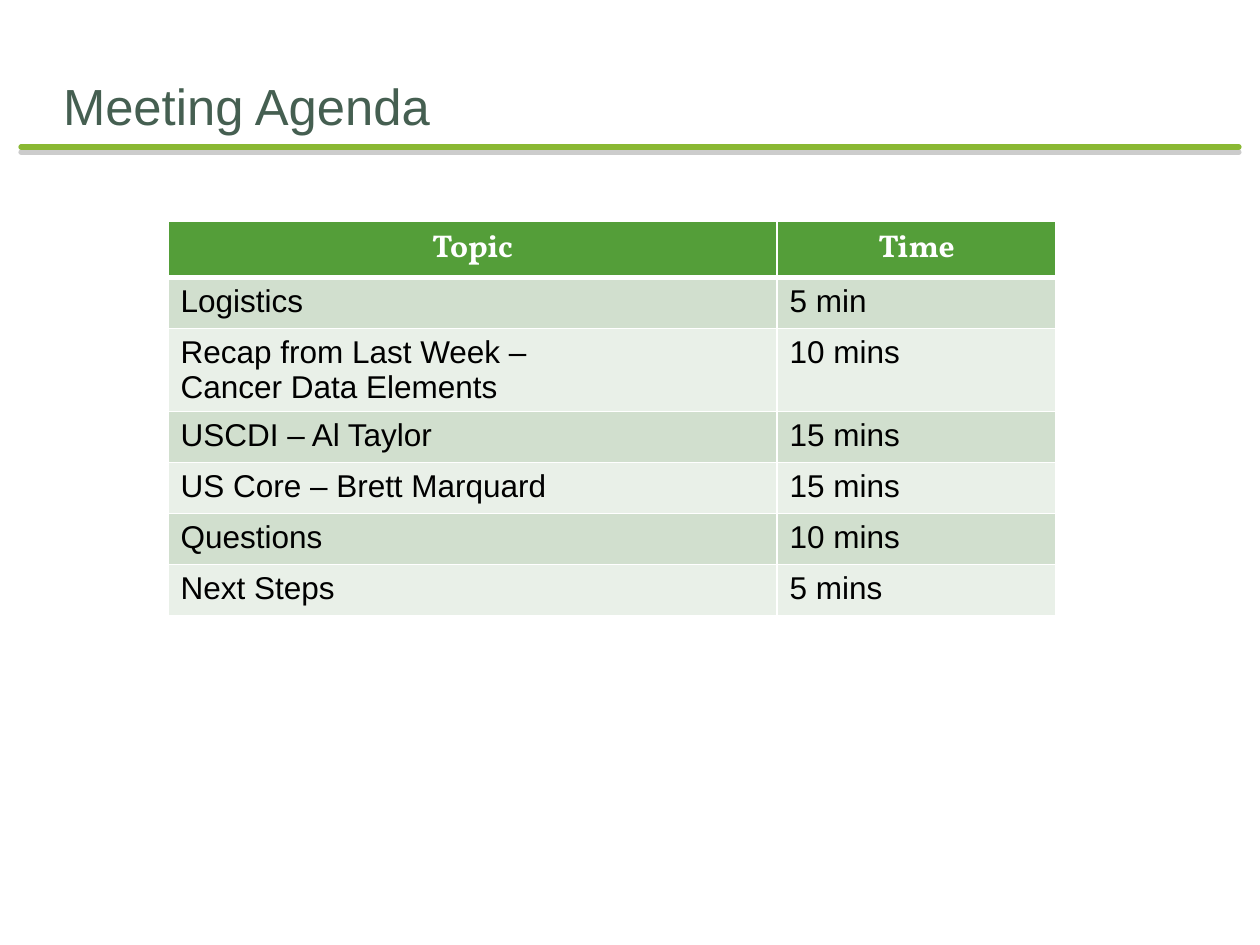
from lxml.etree import SubElement
from pptx import Presentation
from pptx.dml.color import RGBColor
from pptx.enum.shapes import MSO_CONNECTOR
from pptx.enum.text import MSO_ANCHOR, MSO_AUTO_SIZE, PP_ALIGN
from pptx.oxml import parse_xml
from pptx.oxml.ns import nsdecls, qn
from pptx.util import Emu, Pt

PX_PER_INCH = 126
WHITE = RGBColor(0xFF, 0xFF, 0xFF)
BLACK = RGBColor(0x00, 0x00, 0x00)
SLATE = RGBColor(0x45, 0x5F, 0x51)
LIME = RGBColor(0x8A, 0xB8, 0x33)
SHADOW_GREY = RGBColor(0x80, 0x80, 0x80)
HEADER_GREEN = RGBColor(0x54, 0x9E, 0x39)
BANDS = (RGBColor(0xD1, 0xDF, 0xCE), RGBColor(0xE9, 0xF0, 0xE8))

AGENDA = [
    ("Topic", "Time"),
    ("Logistics", "5 min"),
    ("Recap from Last Week –\nCancer Data Elements", "10 mins"),
    ("USCDI – Al Taylor", "15 mins"),
    ("US Core – Brett Marquard", "15 mins"),
    ("Questions", "10 mins"),
    ("Next Steps", "5 mins"),
]


def px(length):
    return Emu(round(length * 914400 / PX_PER_INCH))


def add_text(paragraph, text, font_name, size, color, bold=False):
    run = paragraph.add_run()
    run.text = text
    run.font.name = font_name
    run.font.size = Pt(size)
    run.font.color.rgb = color
    run.font.bold = bold


def place_title(slide, left, top, width, height):
    title = slide.shapes.title
    title.left, title.top, title.width, title.height = map(px, (left, top, width, height))
    frame = title.text_frame
    frame.auto_size = MSO_AUTO_SIZE.NONE
    frame.word_wrap = True
    frame.vertical_anchor = MSO_ANCHOR.BOTTOM
    frame.margin_left = frame.margin_right = frame.margin_bottom = 0
    frame.margin_top = Pt(3.6)
    heading = frame.paragraphs[0]
    heading.alignment = PP_ALIGN.LEFT
    add_text(heading, "Meeting Agenda", "Arial", 29, SLATE)


def add_divider(slide, left, top, width):
    divider = slide.shapes.add_connector(
        MSO_CONNECTOR.STRAIGHT, px(left), px(top), px(left + width), px(top))
    divider.line.color.rgb = LIME
    divider.line.width = Pt(3)
    properties = divider._element.spPr
    properties.find(qn("a:ln")).set("cap", "rnd")
    properties.append(parse_xml(
        f'<a:effectLst {nsdecls("a")}>'
        f'<a:outerShdw blurRad="0" dist="{Pt(3)}" dir="5400000" rotWithShape="0">'
        f'<a:srgbClr val="{SHADOW_GREY}"><a:alpha val="40000"/></a:srgbClr>'
        '</a:outerShdw></a:effectLst>'))


def set_borders(cell, top=1, bottom=1):
    properties = cell._tc.get_or_add_tcPr()
    for side, width in (("L", 1), ("R", 1), ("T", top), ("B", bottom)):
        border = SubElement(properties, qn(f"a:ln{side}"), w=str(Pt(width)))
        fill = SubElement(border, qn("a:solidFill"))
        SubElement(fill, qn("a:srgbClr"), val=str(WHITE))


def fill_cell(cell, text, row_index):
    is_header = row_index == 0
    set_borders(cell, top=3 if row_index == 1 else 1, bottom=3 if is_header else 1)
    cell.fill.solid()
    cell.fill.fore_color.rgb = HEADER_GREEN if is_header else BANDS[(row_index - 1) % 2]
    frame = cell.text_frame
    for index, line in enumerate(text.split("\n")):
        paragraph = frame.add_paragraph() if index else frame.paragraphs[0]
        if is_header:
            paragraph.alignment = PP_ALIGN.CENTER
            add_text(paragraph, line, "Vollkorn", 18, WHITE, bold=True)
        else:
            add_text(paragraph, line, "Arial", 18, BLACK)


def add_agenda(slide, left, top, column_widths, row_height):
    agenda = slide.shapes.add_table(
        len(AGENDA), len(column_widths), px(left), px(top),
        px(sum(column_widths)), px(row_height * len(AGENDA))).table
    for column, width in zip(agenda.columns, column_widths):
        column.width = px(width)
    for row_index, entries in enumerate(AGENDA):
        agenda.rows[row_index].height = px(row_height)
        for column_index, text in enumerate(entries):
            fill_cell(agenda.cell(row_index, column_index), text, row_index)


def main():
    presentation = Presentation()
    presentation.slide_width = px(1260)
    presentation.slide_height = px(945)
    slide = presentation.slides.add_slide(presentation.slide_layouts[5])
    add_divider(slide, 21, 147, 1218)
    place_title(slide, 63, 63, 1134, 73)
    add_agenda(slide, 168, 221, (609, 279), 51)
    presentation.save("out.pptx")


if __name__ == "__main__":
    main()
